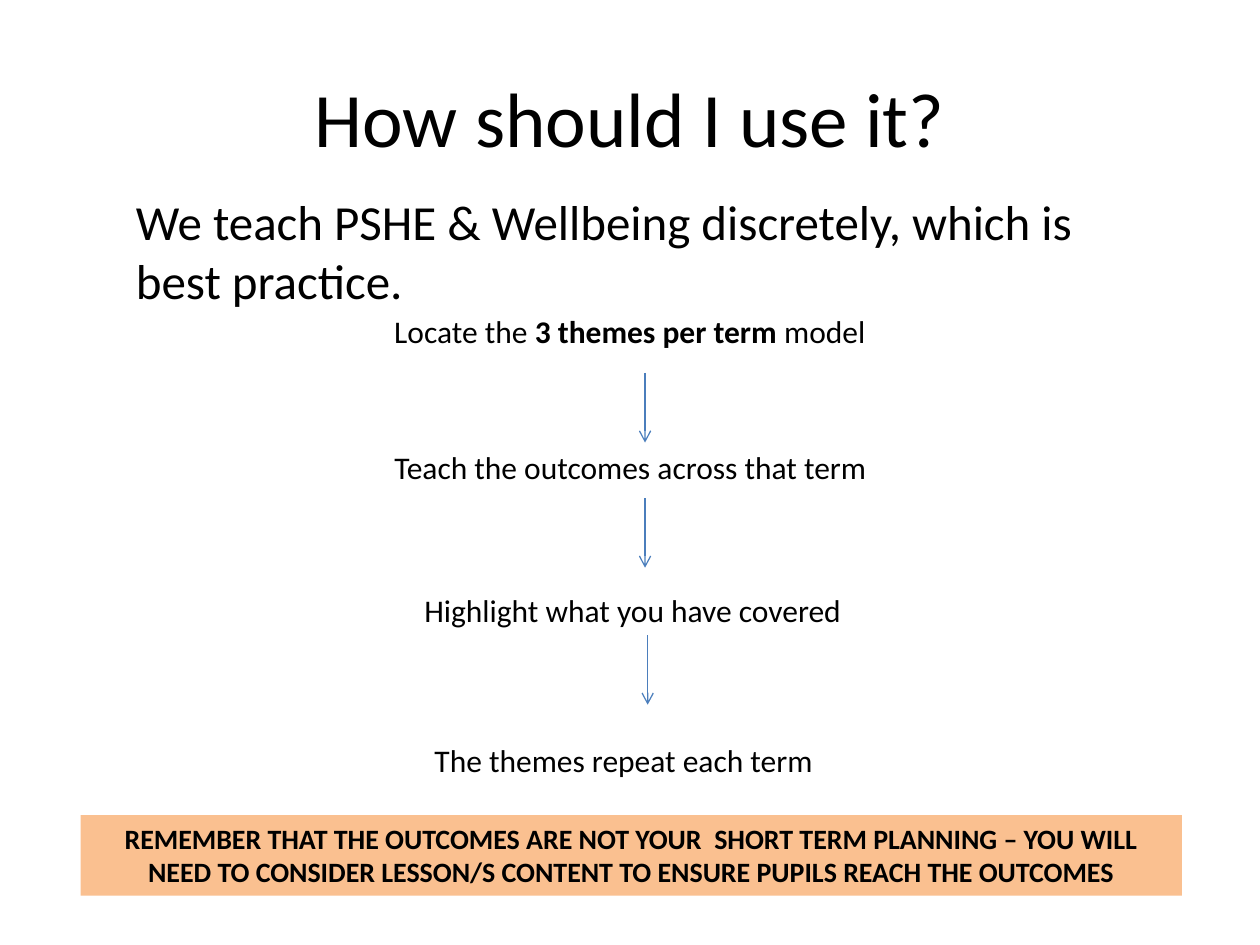
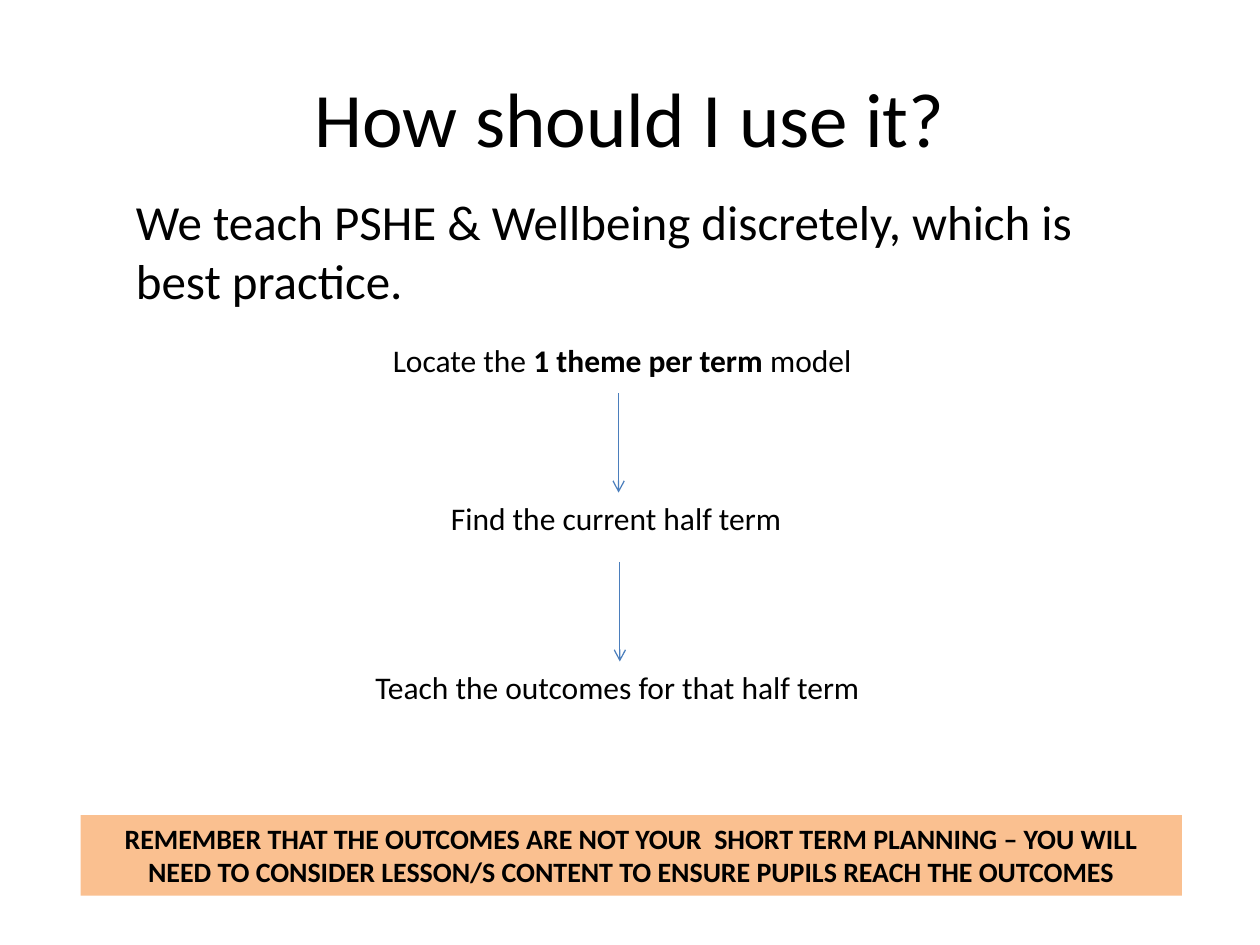
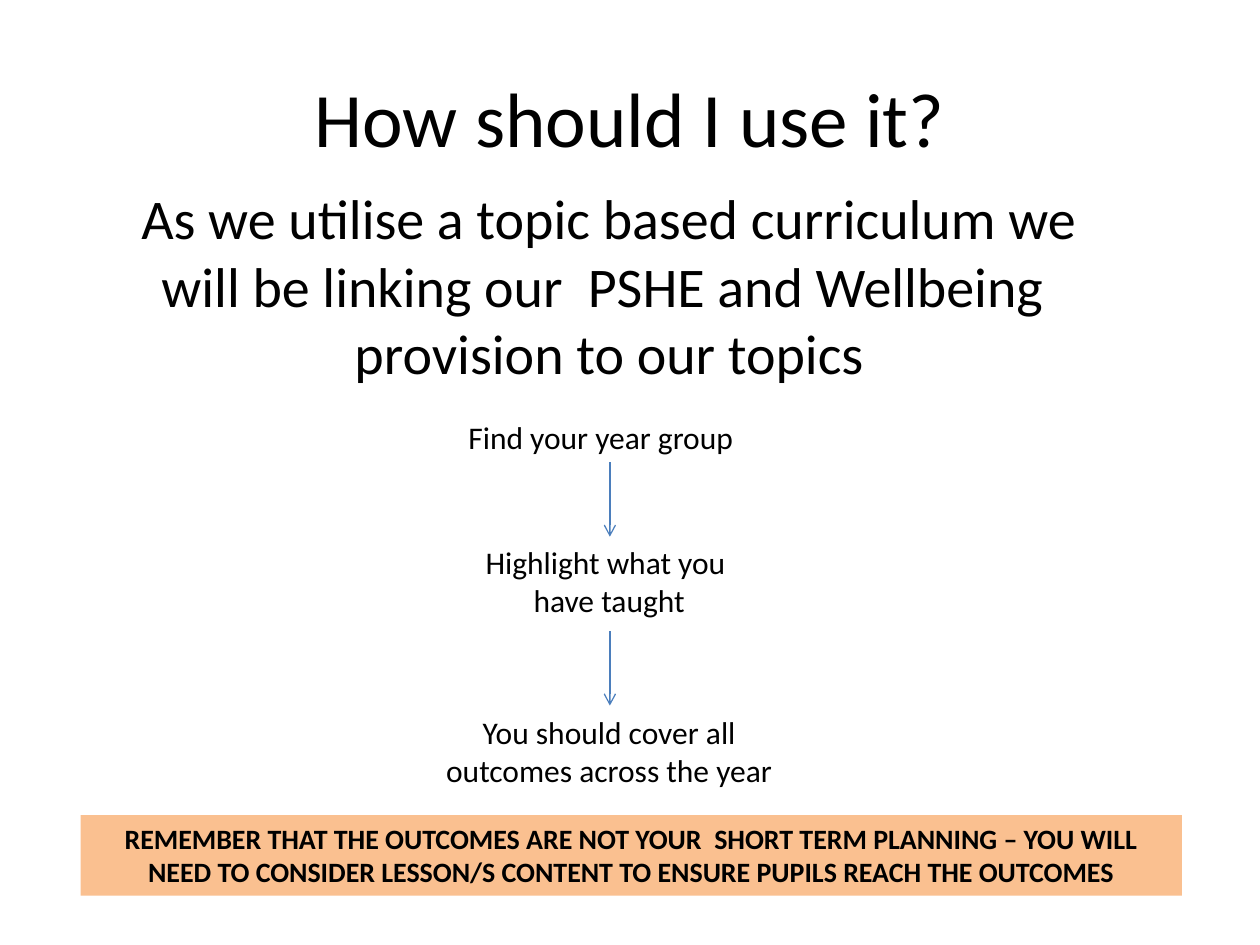
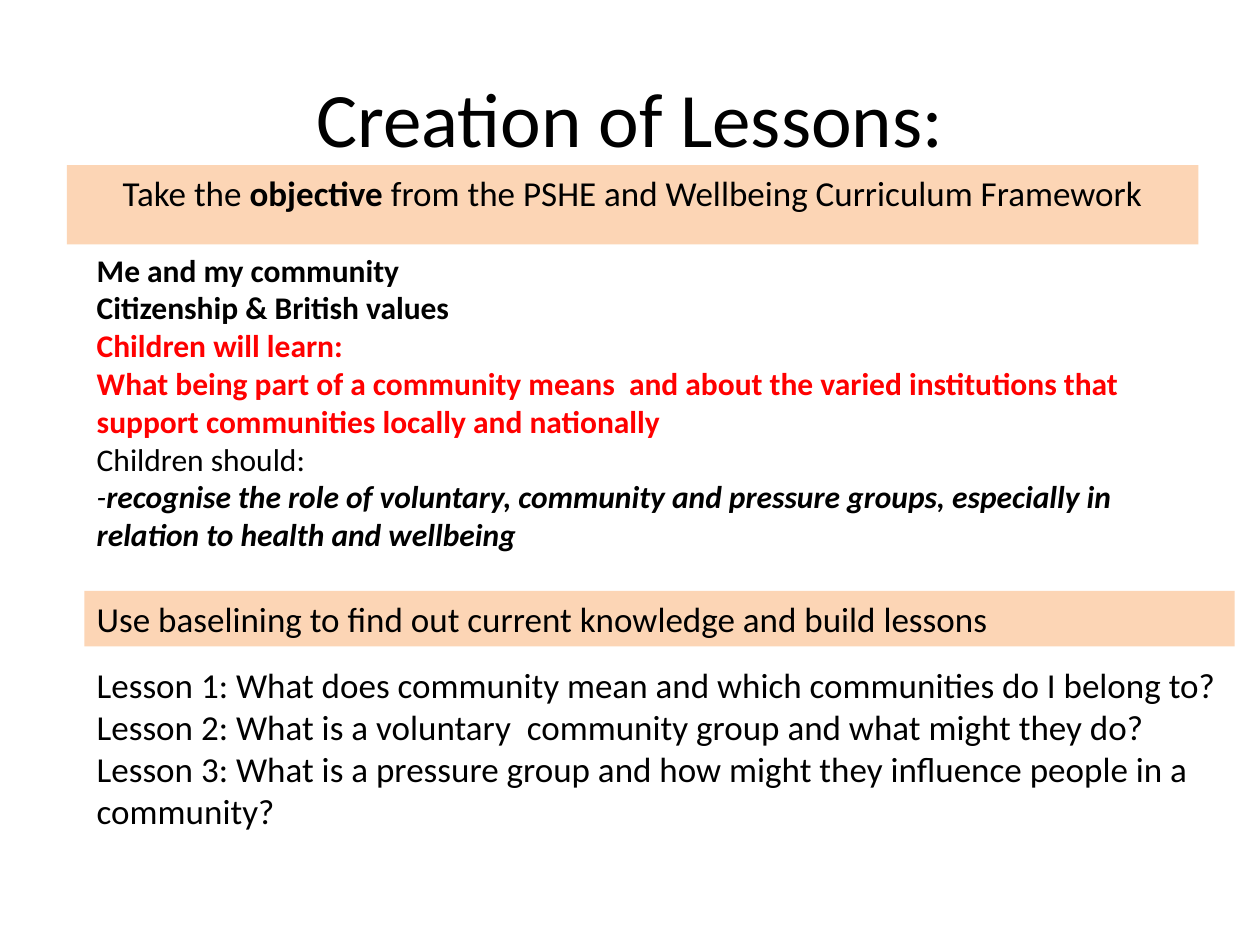
from pptx import Presentation
from pptx.dml.color import RGBColor
from pptx.enum.shapes import MSO_CONNECTOR
from pptx.enum.text import MSO_ANCHOR, MSO_AUTO_SIZE, PP_ALIGN
from pptx.oxml.ns import qn
from pptx.util import Pt
from lxml import etree

LEFT = PP_ALIGN.LEFT
CENTER = PP_ALIGN.CENTER
MIDDLE = MSO_ANCHOR.MIDDLE
GROW = MSO_AUTO_SIZE.SHAPE_TO_FIT_TEXT
FIXED = MSO_AUTO_SIZE.NONE
STRAIGHT = MSO_CONNECTOR.STRAIGHT

FONT = "Calibri"
COLORS = {
    "text": "000000",
    "highlight": "FF0000",
    "arrow": "4B7EBC",
    "reminder": "FAC090",
    "band": "FCD5B5",
}
TITLE_AREA = (36, 21.6, 648, 90)
REMINDER_AREA = (46.1, 465.8, 629.3, 46.1)
REMINDER = (
    "REMEMBER THAT THE OUTCOMES ARE NOT YOUR  SHORT TERM PLANNING – YOU WILL "
    "NEED TO CONSIDER LESSON/S CONTENT TO ENSURE PUPILS REACH THE OUTCOMES"
)
DISCRETE_INTRO = {
    "area": (70.6, 105.8, 566.6, 74.9),
    "lines": ["We teach PSHE & Wellbeing discretely, which is best practice."],
    "size": 28,
    "align": LEFT,
    "wrap": True,
}
TOPIC_INTRO = {
    "area": (70.6, 101.5, 555.1, 123.8),
    "lines": [
        "As we utilise a topic based curriculum we",
        "will be linking our  PSHE and Wellbeing ",
        "provision to our topics",
    ],
    "size": 32,
    "align": CENTER,
    "wrap": False,
}


def place(shape, area):
    shape.left, shape.top, shape.width, shape.height = [Pt(length) for length in area]


def write(box, lines, size, align=LEFT, wrap=True, fill=None, fit=GROW):
    frame = box.text_frame
    frame.word_wrap = wrap
    frame.auto_size = fit
    if fill:
        box.fill.solid()
        box.fill.fore_color.rgb = RGBColor.from_string(COLORS[fill])
    for number, line in enumerate(lines):
        para = frame.paragraphs[0] if number == 0 else frame.add_paragraph()
        para.alignment = align
        spans = [(line, "", "text")] if isinstance(line, str) else line
        for text, style, color in spans:
            span = para.add_run()
            span.text = text
            span.font.name = FONT
            span.font.size = Pt(size)
            span.font.bold = "b" in style
            span.font.italic = "i" in style
            span.font.color.rgb = RGBColor.from_string(COLORS[color])


deck = Presentation()
deck.slide_width = Pt(720)
deck.slide_height = Pt(540)
content_layout = deck.slide_layouts[1]
title_layout = deck.slide_layouts[5]

flows = [
    {
        "intro": DISCRETE_INTRO,
        "steps": [
            ((218.2, 175, 300.2, 29), LEFT, True, [[
                ("Locate the ", "", "text"),
                ("3 themes per term ", "b", "text"),
                ("model", "", "text"),
            ]]),
            ((218.2, 252.7, 317.5, 29), LEFT, True, ["Teach the outcomes across that term"]),
            ((235.4, 334.1, 289.4, 29), LEFT, True, ["Highlight what you have covered"]),
            ((241.2, 419.8, 254.9, 29), LEFT, True, ["The themes repeat each term"]),
        ],
        "arrows": [(368.6, 213.1), (368.6, 284.6), (370.1, 362.9)],
        "arrow_length": 39.8,
    },
    {
        "intro": DISCRETE_INTRO,
        "steps": [
            ((217.4, 191.5, 307.4, 29), LEFT, True, [[
                ("Locate the ", "", "text"),
                ("1 theme per term ", "b", "text"),
                ("model", "", "text"),
            ]]),
            ((250.6, 281.5, 205.9, 29), LEFT, False, ["Find the current half term"]),
            ((207.4, 378, 294.5, 29), LEFT, False, ["Teach the outcomes for that half term"]),
        ],
        "arrows": [(353.5, 224.6), (354.2, 321.1)],
        "arrow_length": 56.9,
    },
    {
        "intro": TOPIC_INTRO,
        "steps": [
            ((260.6, 235.4, 175.7, 29), LEFT, True, ["Find your year group"]),
            ((244.8, 306.7, 206.6, 51), CENTER, True, ["Highlight what you ", "have taught"]),
            ((234.7, 403.9, 226.8, 51), CENTER, True,
             ["You should cover all outcomes across the year"]),
        ],
        "arrows": [(348.5, 264.2), (348.5, 360.7)],
        "arrow_length": 42.5,
    },
]

pages = [deck.slides.add_slide(title_layout) for flow in flows]
lesson_page = deck.slides.add_slide(content_layout)
titles = ["How should I use it?"] * len(flows) + ["Creation of Lessons:"]

for page, title in zip(deck.slides, titles):
    place(page.shapes.title, TITLE_AREA)
    page.shapes.title.text_frame.vertical_anchor = MIDDLE
    write(page.shapes.title, [title], 44, CENTER, fit=FIXED)

for page, flow in zip(pages, flows):
    intro = flow["intro"]
    box = page.shapes.add_textbox(*[Pt(length) for length in intro["area"]])
    write(box, intro["lines"], intro["size"], intro["align"], intro["wrap"])

    for area, align, wrap, lines in flow["steps"]:
        box = page.shapes.add_textbox(*[Pt(length) for length in area])
        write(box, lines, 18, align, wrap)

    for x, top in flow["arrows"]:
        arrow = page.shapes.add_connector(
            STRAIGHT, Pt(x), Pt(top), Pt(x), Pt(top + flow["arrow_length"])
        )
        arrow.line.color.rgb = RGBColor.from_string(COLORS["arrow"])
        arrow.line.width = Pt(0.75)
        etree.SubElement(arrow.line._get_or_add_ln(), qn("a:tailEnd"), type="arrow")
        etree.SubElement(arrow._element.spPr, qn("a:effectLst"))

    box = page.shapes.add_textbox(*[Pt(length) for length in REMINDER_AREA])
    write(box, [[(REMINDER, "b", "text")]], 16, CENTER, fill="reminder")

objective = lesson_page.placeholders[1]
place(objective, (38.2, 94.3, 646.6, 45.4))
write(objective, [[
    ("Take the ", "", "text"),
    ("objective", "b", "text"),
    (" from the PSHE and Wellbeing Curriculum Framework", "", "text"),
]], 20, CENTER, fill="band", fit=FIXED)
properties = objective.text_frame.paragraphs[0]._p.get_or_add_pPr()
properties.set("marL", "0")
properties.set("indent", "0")
etree.SubElement(properties, qn("a:buNone"))

outcomes = lesson_page.shapes.add_textbox(Pt(48.2), Pt(139.7), Pt(646.6), Pt(181.4))
write(outcomes, [
    [("Me and my community", "b", "text")],
    [("Citizenship & British values", "b", "text")],
    [("Children will learn:", "b", "highlight")],
    [("What being part of a community means  and about the varied institutions "
      "that support communities locally and nationally", "b", "highlight")],
    "Children should:",
    [("-", "i", "text"),
     ("recognise the role of voluntary, community and pressure groups, "
      "especially in relation to health and wellbeing", "bi", "text")],
], 18)

lessons = lesson_page.shapes.add_textbox(Pt(48.2), Pt(375.8), Pt(657.4), Pt(123.8))
write(lessons, [
    "Lesson 1: What does community mean and which communities do I belong to?",
    "Lesson 2: What is a voluntary  community group and what might they do?",
    "Lesson 3: What is a pressure group and how might they influence people in a community?",
], 20)

baseline = lesson_page.shapes.add_textbox(Pt(48.2), Pt(337.7), Pt(657.4), Pt(31.7))
write(baseline, ["Use baselining to find out current knowledge and build lessons"], 20, fill="band")

deck.save("out.pptx")
